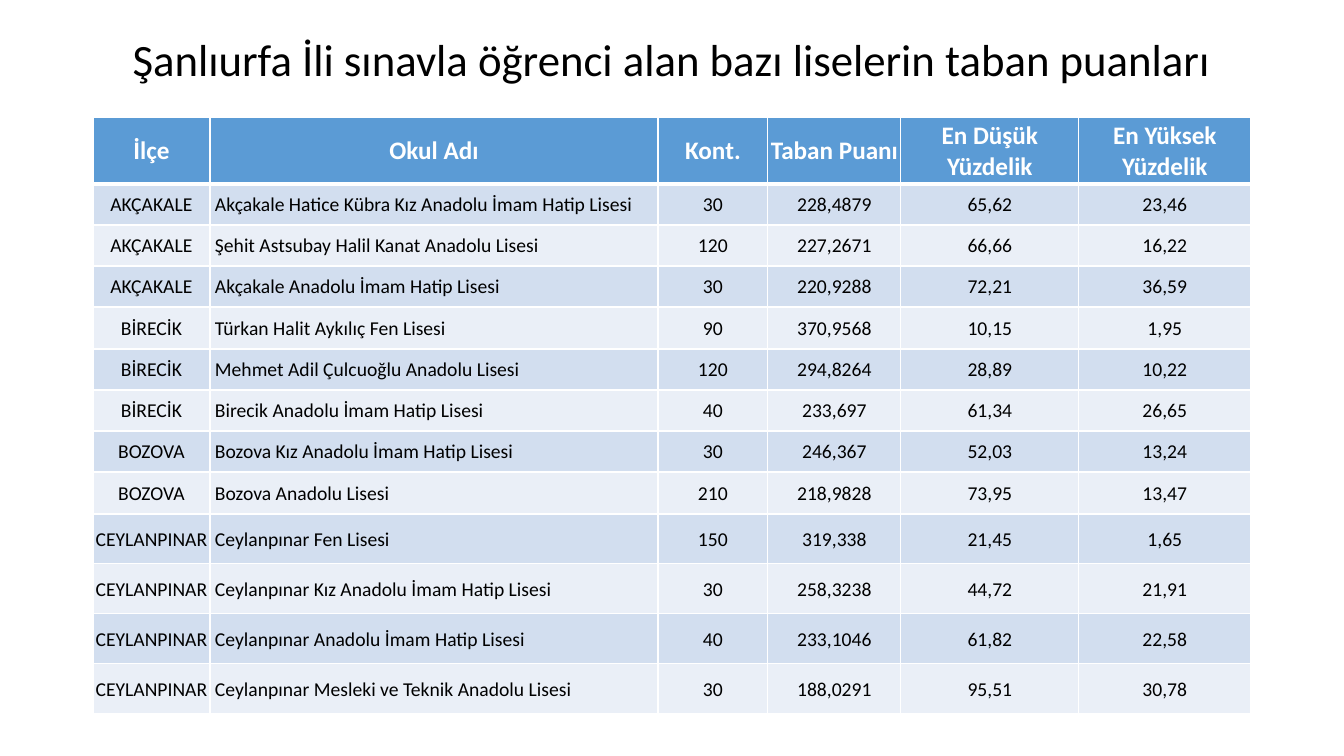
from lxml.etree import SubElement
from pptx import Presentation
from pptx.dml.color import RGBColor
from pptx.enum.text import MSO_ANCHOR, PP_ALIGN
from pptx.oxml.ns import qn
from pptx.util import Emu, Pt

EMU_PER_PX = 914400 / 100.8

COLUMN_WIDTHS = [117, 448, 110, 133, 178, 172]
ROW_HEIGHTS = [67] + [41, 41, 41, 42] * 2 + [50] * 4
SCHOOL_COLUMN = 1

HEADINGS = ["İlçe", "Okul Adı", "Kont.", "Taban Puanı",
            "En Düşük Yüzdelik", "En Yüksek Yüzdelik"]
SCHOOLS = [
    ["AKÇAKALE", "Akçakale Hatice Kübra Kız Anadolu İmam Hatip Lisesi", "30", "228,4879", "65,62", "23,46"],
    ["AKÇAKALE", "Şehit Astsubay Halil Kanat Anadolu Lisesi", "120", "227,2671", "66,66", "16,22"],
    ["AKÇAKALE", "Akçakale Anadolu İmam Hatip Lisesi", "30", "220,9288", "72,21", "36,59"],
    ["BİRECİK", "Türkan Halit Aykılıç Fen Lisesi", "90", "370,9568", "10,15", "1,95"],
    ["BİRECİK", "Mehmet Adil Çulcuoğlu Anadolu Lisesi", "120", "294,8264", "28,89", "10,22"],
    ["BİRECİK", "Birecik Anadolu İmam Hatip Lisesi", "40", "233,697", "61,34", "26,65"],
    ["BOZOVA", "Bozova Kız Anadolu İmam Hatip Lisesi", "30", "246,367", "52,03", "13,24"],
    ["BOZOVA", "Bozova Anadolu Lisesi", "210", "218,9828", "73,95", "13,47"],
    ["CEYLANPINAR", "Ceylanpınar Fen Lisesi", "150", "319,338", "21,45", "1,65"],
    ["CEYLANPINAR", "Ceylanpınar Kız Anadolu İmam Hatip Lisesi", "30", "258,3238", "44,72", "21,91"],
    ["CEYLANPINAR", "Ceylanpınar Anadolu İmam Hatip Lisesi", "40", "233,1046", "61,82", "22,58"],
    ["CEYLANPINAR", "Ceylanpınar Mesleki ve Teknik Anadolu Lisesi", "30", "188,0291", "95,51", "30,78"],
]


def px(length):
    return Emu(round(length * EMU_PER_PX))


def color(hex_string):
    return RGBColor.from_string(hex_string)


class SlideBuilder:
    FONT = "Calibri"
    INK = "000000"
    WHITE = "FFFFFF"
    HEADER_FILL = "5B9BD5"
    BAND_FILLS = ["D2DEEF", "EAEFF7"]

    def __init__(self, slide):
        self.slide = slide

    def style(self, paragraph, size, ink, bold=False, align=PP_ALIGN.CENTER):
        paragraph.alignment = align
        for run in paragraph.runs:
            run.font.name = self.FONT
            run.font.size = Pt(size)
            run.font.bold = bold
            run.font.color.rgb = color(ink)

    def title(self, text, left, top, width, height):
        frame = self.slide.shapes.add_textbox(px(left), px(top), px(width), px(height)).text_frame
        frame.word_wrap = True
        frame.vertical_anchor = MSO_ANCHOR.MIDDLE
        frame.text = text
        frame.paragraphs[0].line_spacing = 0.9
        self.style(frame.paragraphs[0], 32, self.INK)

    def borders(self, cell, bottom_width):
        properties = cell._tc.get_or_add_tcPr()
        widths = {"a:lnL": 1, "a:lnR": 1, "a:lnT": 1, "a:lnB": bottom_width}
        for position, (side, width) in enumerate(widths.items()):
            line = SubElement(properties, qn(side), w=str(Pt(width)))
            fill = SubElement(line, qn("a:solidFill"))
            SubElement(fill, qn("a:srgbClr"), val=self.WHITE)
            # Borders come before the fill in the cell properties
            properties.insert(position, line)

    def cell(self, cell, text, fill, size, ink, bold, align, indent, bottom_width):
        cell.margin_left = px(indent)
        cell.margin_right = cell.margin_top = px(1)
        cell.margin_bottom = 0
        cell.vertical_anchor = MSO_ANCHOR.MIDDLE
        cell.fill.solid()
        cell.fill.fore_color.rgb = color(fill)
        self.borders(cell, bottom_width)
        cell.text = text
        self.style(cell.text_frame.paragraphs[0], size, ink, bold, align)

    def table(self, headings, records, left, top, widths, heights):
        grid = self.slide.shapes.add_table(
            len(heights), len(widths), px(left), px(top),
            px(sum(widths)), px(sum(heights))).table
        for column, width in zip(grid.columns, widths):
            column.width = px(width)
        for row, height in zip(grid.rows, heights):
            row.height = px(height)

        # Header row
        for c, heading in enumerate(headings):
            self.cell(grid.cell(0, c), heading, self.HEADER_FILL, 18, self.WHITE,
                      True, PP_ALIGN.CENTER, 1, 3)

        # Banded school rows
        for r, record in enumerate(records):
            for c, value in enumerate(record):
                is_school = c == SCHOOL_COLUMN
                self.cell(grid.cell(r + 1, c), value, self.BAND_FILLS[r % 2], 14, self.INK,
                          False, PP_ALIGN.LEFT if is_school else PP_ALIGN.CENTER,
                          5 if is_school else 1, 1)


def main():
    presentation = Presentation()
    presentation.slide_width = px(1344)
    presentation.slide_height = px(756)
    builder = SlideBuilder(presentation.slides.add_slide(presentation.slide_layouts[6]))

    # Title
    builder.title("Şanlıurfa İli sınavla öğrenci alan bazı liselerin taban puanları",
                  93, 7, 1158, 110)

    # Base scores by school
    builder.table(HEADINGS, SCHOOLS, 93, 117, COLUMN_WIDTHS, ROW_HEIGHTS)

    presentation.save("out.pptx")


if __name__ == "__main__":
    main()
